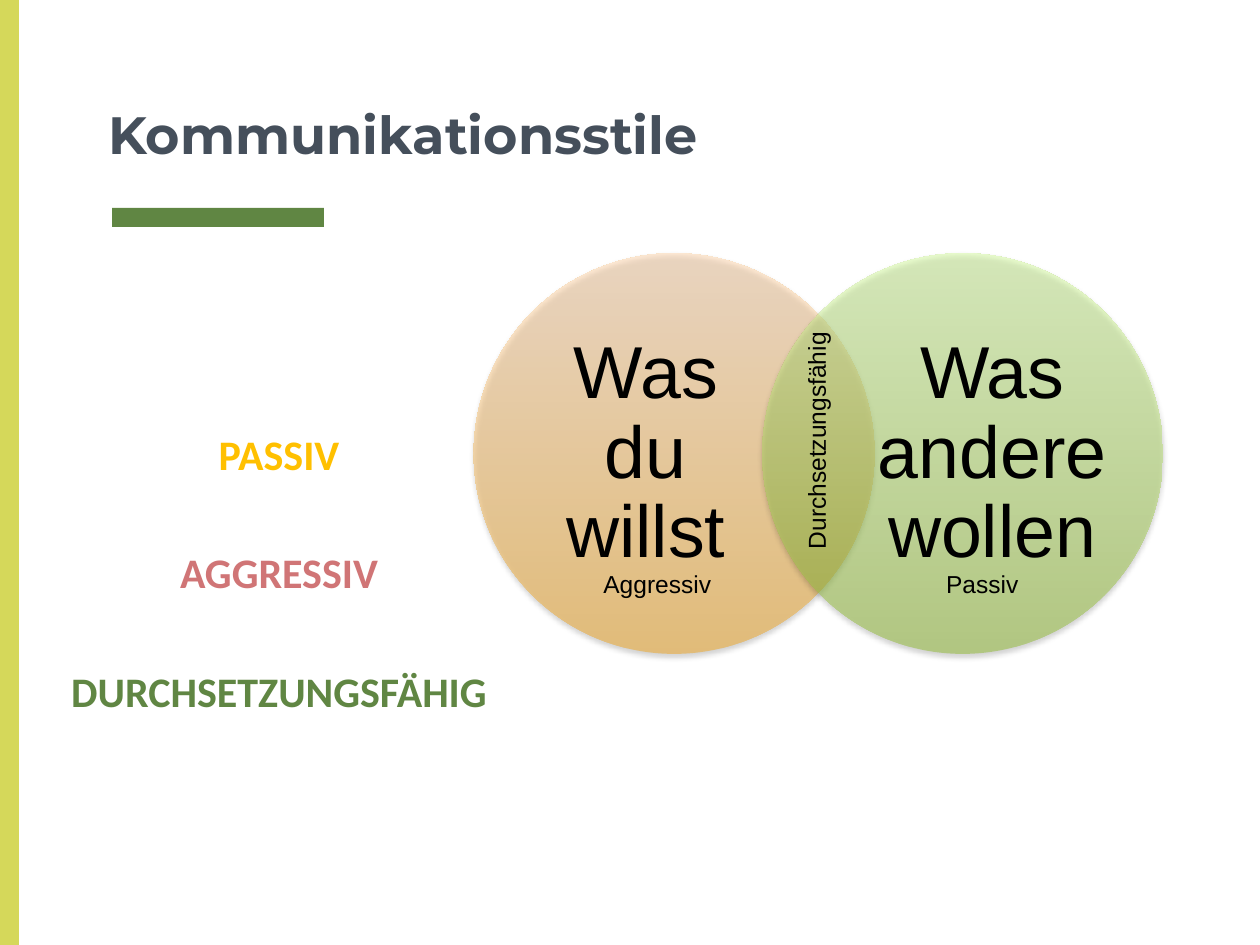
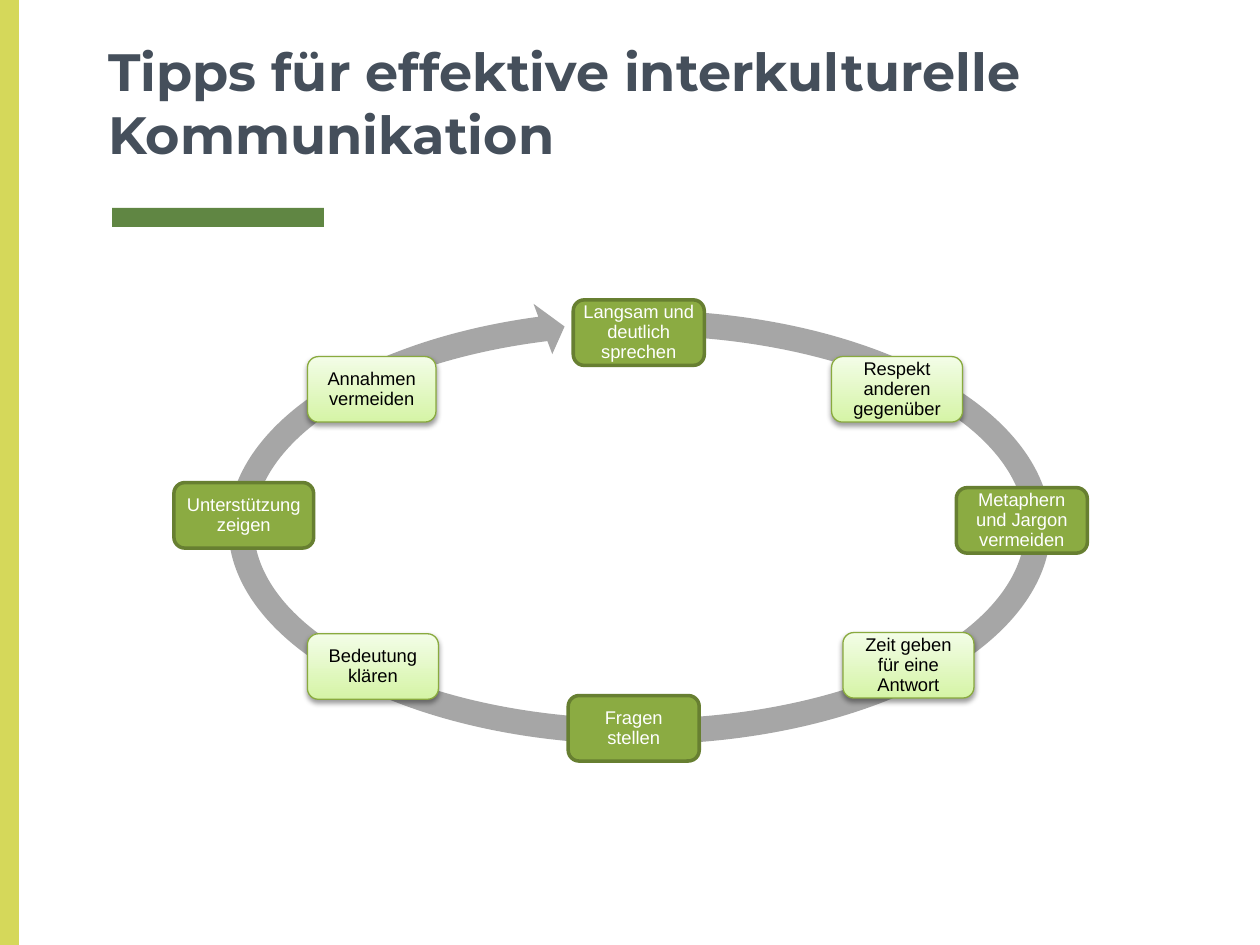
from lxml import etree
from pptx import Presentation
from pptx.dml.color import RGBColor
from pptx.enum.shapes import MSO_SHAPE
from pptx.enum.text import MSO_ANCHOR, MSO_AUTO_SIZE, PP_ALIGN
from pptx.oxml.ns import qn
from pptx.util import Inches, Pt

RECT, OVAL = MSO_SHAPE.RECTANGLE, MSO_SHAPE.OVAL
ROUNDED, RING_ARROW = MSO_SHAPE.ROUNDED_RECTANGLE, MSO_SHAPE.CIRCULAR_ARROW
LEFT, CENTER = PP_ALIGN.LEFT, PP_ALIGN.CENTER
TOP, MIDDLE, BOTTOM = MSO_ANCHOR.TOP, MSO_ANCHOR.MIDDLE, MSO_ANCHOR.BOTTOM

COLORS = {
    "title": "454F5B", "bar": "608643", "band": "D5D85A",
    "passive": "FFC000", "aggressive": "D07576", "assertive": "608643",
    "orange": "F0A621", "orange_light": "FFD6AD",
    "green": "91BB32", "green_light": "D6FBA0",
    "ring": "A6A6A6", "node": "8BAB42", "node_line": "677F31",
    "pale": "D5F4A6", "pale_light": "F3FDE7", "pale_line": "89AA3E",
    "black": "000000", "white": "FFFFFF",
}
RGB = {name: RGBColor.from_string(value) for name, value in COLORS.items()}

# Grid of 100 columns by 75 rows
COLUMNS, ROWS = 100, 75
prs = Presentation()
prs.slide_width, prs.slide_height = Inches(10), Inches(7.5)
CELL = prs.slide_width / COLUMNS


def add_block(slide, kind, area, fill, alpha=None, shadow=None):
    """Shape on the grid; a pair of fills runs from bottom to top."""
    block = slide.shapes.add_shape(kind, *[round(n * CELL) for n in area])
    block.line.fill.background()
    block.shadow.inherit = False
    if isinstance(fill, str):
        block.fill.solid()
        block.fill.fore_color.rgb = RGB[fill]
    else:
        block.fill.gradient()
        block.fill.gradient_angle = 90
        for stop, position, name in zip(block.fill.gradient_stops, (0, 1), fill):
            stop.position = position
            stop.color.rgb = RGB[name]
    if alpha:
        for color in block.element.spPr.iter(qn("a:srgbClr")):
            etree.SubElement(color, qn("a:alpha"), val=str(alpha * 1000))
    if shadow:
        effects = block.element.spPr.find(qn("a:effectLst"))
        outer = etree.SubElement(effects, qn("a:outerShdw"), blurRad=str(Pt(3.1)),
                                 dist=str(Pt(1.7)), dir="5400000", rotWithShape="0")
        color = etree.SubElement(outer, qn("a:srgbClr"), val=COLORS["black"])
        etree.SubElement(color, qn("a:alpha"), val=str(shadow * 1000))
    return block


def write(holder, lines, size, colors, font="Arial", align=CENTER, anchor=MIDDLE,
          inset=0, spacing=None, bold=False, gap=0):
    """Fill a text frame with one paragraph per line."""
    frame = holder.text_frame
    frame.word_wrap, frame.auto_size = True, MSO_AUTO_SIZE.NONE
    frame.vertical_anchor = anchor
    frame.margin_left = frame.margin_right = Inches(inset)
    frame.margin_top = frame.margin_bottom = Inches(inset)
    frame.text = "\n".join(lines)
    for number, (paragraph, color) in enumerate(zip(frame.paragraphs, colors)):
        paragraph.alignment = align
        paragraph.line_spacing = spacing
        paragraph.space_before = Pt(gap if number else 0)
        paragraph.font.name, paragraph.font.size = font, Pt(size)
        paragraph.font.bold = bold
        paragraph.font.color.rgb = RGB[color]


# Shared parts: accent bar, side band, title
slides = []
for heading in ("Kommunikationsstile",
                "Tipps für effektive interkulturelle\vKommunikation"):
    slide = prs.slides.add_slide(prs.slide_layouts[5])
    add_block(slide, RECT, (8.9, 16.5, 16.8, 1.5), "bar")
    add_block(slide, RECT, (0, 0, 1.5, ROWS), "band")
    title = slide.shapes.title
    title.left, title.top, title.width, title.height = [
        round(n * CELL) for n in (7.6, 0, 84.9, 14.1)]
    write(title, [heading], 30, ["title"], "Montserrat", LEFT, BOTTOM, 0.1, bold=True)
    slides.append(slide)
styles_slide, tips_slide = slides

# Communication styles: list on the left
style_list = styles_slide.shapes.add_textbox(
    *[round(n * CELL) for n in (4.3, 24.5, 35.7, 32.3)])
write(style_list, ["PASSIV", "AGGRESSIV", "DURCHSETZUNGSFÄHIG"], 24,
      ["passive", "aggressive", "assertive"], "Calibri", anchor=BOTTOM,
      spacing=2, bold=True, gap=10)

# Overlapping circles with their wishes
for circle_left, wish_left, wish, fill in (
        (37.6, 42.1, "Was du willst", ("orange", "orange_light")),
        (60.5, 69.6, "Was andere wollen", ("green", "green_light"))):
    add_block(styles_slide, OVAL, (circle_left, 20.1, 31.8, 31.8), fill, 50, 35)
    wish_box = styles_slide.shapes.add_textbox(
        *[round(n * CELL) for n in (wish_left, 23.9, 18.3, 24.3)])
    write(wish_box, [wish], 42, ["black"], spacing=0.9)

# Style names inside the circles
for style, area, direction in (
        ("Durchsetzungsfähig", (63.1, 24.5, 4.4, 20.1), "vert270"),
        ("Aggressiv", (46.9, 44.7, 11.5, 3.4), "horz"),
        ("Passiv", (74.1, 44.7, 11.5, 3.4), "horz")):
    style_name = styles_slide.shapes.add_textbox(*[round(n * CELL) for n in area])
    write(style_name, [style], 14, ["black"], align=LEFT, anchor=TOP, inset=0.05)
    body = style_name.text_frame
    body.margin_left = body.margin_right = Inches(0.1)
    if direction == "vert270":
        body.margin_left = body.margin_right = Inches(0.05)
        body.margin_top = body.margin_bottom = Inches(0.1)
    style_name.element.find(".//" + qn("a:bodyPr")).set("vert", direction)

# Tips: ring arrow behind the stations
ring = add_block(tips_slide, RING_ARROW, (17, 23.5, 67.5, 36.7), "ring")
for index, value in enumerate((0.055, 3.307, 146.423, 168.782, 0.058)):
    ring.adjustments[index] = value

# Stations clockwise from the top, dark and pale in turn
tips = (
    ("Langsam und deutlich sprechen", 45.5, 23.8, 10.4),
    ("Respekt anderen gegenüber", 66, 28.3, 10.4),
    ("Metaphern und Jargon vermeiden", 75.9, 38.7, 10.4),
    ("Zeit geben für eine Antwort", 66.9, 50.2, 10.4),
    ("Fragen stellen", 45.1, 55.2, 10.4),
    ("Bedeutung klären", 24.4, 50.3, 10.4),
    ("Unterstützung zeigen", 13.8, 38.3, 11.1),
    ("Annahmen vermeiden", 24.4, 28.3, 10.2),
)
for number, (tip, left, top, width) in enumerate(tips):
    area = (left, top, width, 5.2)
    if number % 2:
        station = add_block(tips_slide, ROUNDED, area, ("pale", "pale_light"), shadow=38)
        line_color, line_width, text_color = "pale_line", 0.75, "black"
    else:
        station = add_block(tips_slide, ROUNDED, area, "node")
        line_color, line_width, text_color = "node_line", 2, "white"
    station.line.color.rgb = RGB[line_color]
    station.line.width = Pt(line_width)
    write(station, [tip], 10.5, [text_color], inset=0.05, spacing=0.9)

prs.save("out.pptx")
